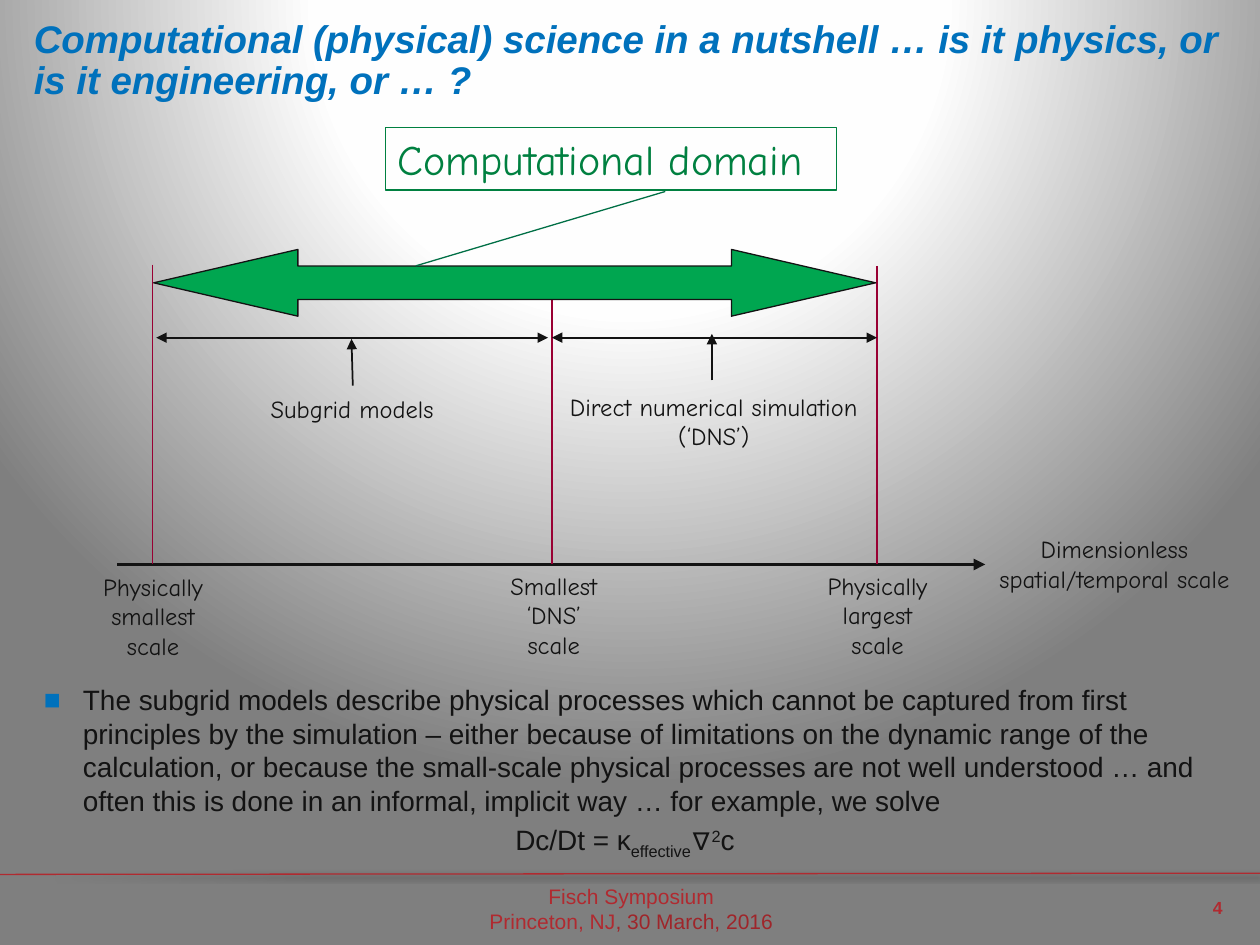
from lxml.etree import SubElement
from pptx import Presentation
from pptx.dml.color import RGBColor
from pptx.enum.shapes import MSO_CONNECTOR, MSO_SHAPE
from pptx.enum.text import MSO_ANCHOR, PP_ALIGN
from pptx.oxml import parse_xml
from pptx.oxml.ns import nsdecls, qn
from pptx.util import Inches, Pt

INK, BLUE, RED, DARK_RED = "131313", "0071BC", "B02A30", "9F252A"
MARKER, GREEN, ARROW_GREEN, LEADER = "990033", "008040", "00A650", "006F45"
BODY_FONT, LABEL_FONT = "Arial", "Comic Neue"
STATEMENT = (
    "The subgrid models describe physical processes which cannot be captured from first "
    "principles by the simulation – either because of limitations on the dynamic range of the "
    "calculation, or because the small-scale physical processes are not well understood … and "
    "often this is done in an informal, implicit way … for example, we solve"
)


def color(value):
    return RGBColor.from_string(value)


def add_xml(parent, tag, **attributes):
    return SubElement(parent, qn(tag), {name: str(value) for name, value in attributes.items()})


class SlideBuilder:
    """Holds the current slide and the style of its elements."""

    def __init__(self, page):
        self.page = page
        self.shapes = page.shapes

    def background(self, stops):
        """Fill the page with a circular gradient centred above it."""
        self.page.background.fill.gradient()
        properties = self.page._element.cSld.find(qn("p:bg")).find(qn("p:bgPr"))
        gradient = parse_xml(
            f'<a:gradFill {nsdecls("a")} rotWithShape="1"><a:gsLst/><a:path path="circle">'
            '<a:fillToRect l="50000" t="-80000" r="50000" b="180000"/></a:path></a:gradFill>')
        properties.replace(properties.find(qn("a:gradFill")), gradient)
        for percent, value in stops:
            stop = add_xml(gradient.find(qn("a:gsLst")), "a:gs", pos=percent * 1000)
            add_xml(stop, "a:srgbClr", val=value)

    def fill_text(self, frame, lines, size, value, font=BODY_FONT, align=PP_ALIGN.CENTER,
                  bold=False, italic=False):
        frame.text = "\n".join(lines)
        for para in frame.paragraphs:
            para.alignment = align
            for span in para.runs:
                self.style(span, size, value, font, bold, italic)

    def style(self, span, size, value, font=BODY_FONT, bold=False, italic=False):
        span.font.size, span.font.name = Pt(size), font
        span.font.bold, span.font.italic = bold, italic
        span.font.color.rgb = color(value)

    def text(self, left, top, width, height, lines, size, value, **style):
        box = self.shapes.add_textbox(Inches(left), Inches(top), Inches(width), Inches(height))
        frame = box.text_frame
        frame.word_wrap = True
        self.fill_text(frame, lines, size, value, **style)
        return frame

    def label(self, left, top, width, height, *lines):
        frame = self.text(left, top, width, height, lines, 14, INK, font=LABEL_FONT)
        frame.word_wrap = False
        frame.vertical_anchor = MSO_ANCHOR.MIDDLE

    def line(self, start, end, value, width, head=False, tail=False, shadow=False):
        connector = self.shapes.add_connector(
            MSO_CONNECTOR.STRAIGHT, *(Inches(number) for number in start + end))
        connector.line.color.rgb = color(value)
        connector.line.width = Pt(width)
        outline = connector.line._get_or_add_ln()
        for wanted, tag in ((head, "a:headEnd"), (tail, "a:tailEnd")):
            if wanted:
                add_xml(outline, tag, type="triangle")
        effects = add_xml(connector._element.spPr, "a:effectLst")
        if shadow:
            outer = add_xml(effects, "a:outerShdw", blurRad=Pt(3.1), dist=Pt(1.6),
                            dir=90 * 60000, rotWithShape=0)
            black = add_xml(outer, "a:srgbClr", val="000000")
            add_xml(black, "a:alpha", val=38000)

    def shape(self, kind, left, top, width, height, outline, fill=None):
        shape = self.shapes.add_shape(
            kind, Inches(left), Inches(top), Inches(width), Inches(height))
        shape.shadow.inherit = False
        shape.line.color.rgb = color(outline)
        shape.line.width = Pt(0.75)
        if fill:
            shape.fill.solid()
            shape.fill.fore_color.rgb = color(fill)
        else:
            shape.fill.background()
        return shape

    def bullet(self, para, value):
        properties = para._p.get_or_add_pPr()
        properties.set("marL", str(Inches(0.31)))
        properties.set("indent", str(-Inches(0.31)))
        add_xml(add_xml(properties, "a:buClr"), "a:srgbClr", val=value)
        add_xml(properties, "a:buFont", typeface=BODY_FONT)
        add_xml(properties, "a:buChar", char="■")

    def formula(self, para, parts):
        """Add runs given as (text, baseline shift in percent)."""
        para.alignment = PP_ALIGN.CENTER
        for content, shift in parts:
            span = para.add_run()
            span.text = content
            self.style(span, 16, INK)
            if shift:
                span._r.get_or_add_rPr().set("baseline", str(shift * 1000))


def add_frame(builder):
    """Add the background, footer and title."""
    builder.background([(0, "FFFFFF"), (40, "FEFEFE"), (100, "7F7F7F")])
    footer = builder.text(2.42, 6.96, 5.18, 0.5, ["Fisch Symposium", "Princeton, NJ"], 12, RED)
    date = footer.paragraphs[1].add_run()
    date.text = ", 30 March, 2016"
    builder.style(date, 12, DARK_RED)
    builder.line((0, 6.94), (10, 6.93), RED, 0.75, shadow=True)
    builder.text(9.41, 7.07, 0.39, 0.38, ["4"], 10, RED, align=PP_ALIGN.RIGHT, bold=True)
    title = builder.text(
        0.17, 0.16, 9.83, 0.72,
        ["Computational (physical) science in a nutshell … is it physics, "
         "or is it engineering, or … ?"],
        22, BLUE, align=PP_ALIGN.LEFT, bold=True, italic=True)
    title.margin_top = 0
    title.paragraphs[0].line_spacing = 0.9


def add_statement(builder):
    body = builder.text(0.25, 5.37, 9.42, 1.56, [STATEMENT], 16, INK, align=PP_ALIGN.LEFT)
    equation = body.add_paragraph()
    builder.formula(equation, [("Dc/Dt = κ", 0), ("effective", -25), ("∇", 0), ("2", 30), ("c", 0)])
    for para in body.paragraphs:
        para.space_before = para.space_after = Pt(1.6)
    builder.bullet(body.paragraphs[0], BLUE)


def add_scale_diagram(builder):
    axis, range_level = 4.48, 2.68
    smallest, dns, largest = 1.21, 4.38, 6.96

    builder.line((0.93, axis), (7.82, axis), INK, 2.25, tail=True)
    builder.label(7.74, 4.19, 2.21, 0.57, "Dimensionless", "spatial/temporal scale")
    builder.label(6.43, axis, 1.07, 0.8, "Physically", "largest", "scale")
    builder.label(0.68, 4.49, 1.07, 0.8, "Physically", "smallest", "scale")
    builder.label(3.9, axis, 0.99, 0.8, "Smallest", "‘DNS’", "scale")
    for position, top in ((smallest, 2.1), (dns, 2.12), (largest, 2.11)):
        builder.line((position, top), (position, axis), MARKER, 1)

    for start, end in ((1.24, 4.35), (dns, largest)):
        builder.line((start, range_level), (end, range_level), INK, 1, head=True, tail=True)
    builder.label(4.32, 3.06, 2.69, 0.57, "Direct numerical simulation", "(‘DNS’)")
    builder.label(1.99, 3.07, 1.61, 0.34, "Subgrid models")
    builder.line((5.65, 3.02), (5.65, 2.65), INK, 1, tail=True)
    builder.line((2.8, 3.06), (2.79, 2.69), INK, 1, tail=True)

    domain = builder.shape(MSO_SHAPE.LEFT_RIGHT_ARROW, 1.22, 1.98, 5.73, 0.53, INK, ARROW_GREEN)
    domain.adjustments[0], domain.adjustments[1] = 0.5, 2.16
    caption = builder.shape(MSO_SHAPE.RECTANGLE, 3.06, 1.01, 3.58, 0.5, GREEN)
    caption.text_frame.word_wrap = True
    caption.text_frame.vertical_anchor = MSO_ANCHOR.TOP
    builder.fill_text(caption.text_frame, ["Computational domain"], 24, GREEN,
                      font=LABEL_FONT, align=PP_ALIGN.LEFT)
    builder.line((5.28, 1.52), (3.3, 2.11), LEADER, 0.75)


def main():
    deck = Presentation()
    deck.slide_width, deck.slide_height = Inches(10), Inches(7.5)
    builder = SlideBuilder(deck.slides.add_slide(deck.slide_layouts[6]))
    add_frame(builder)
    add_statement(builder)
    add_scale_diagram(builder)
    deck.save("out.pptx")


if __name__ == "__main__":
    main()
